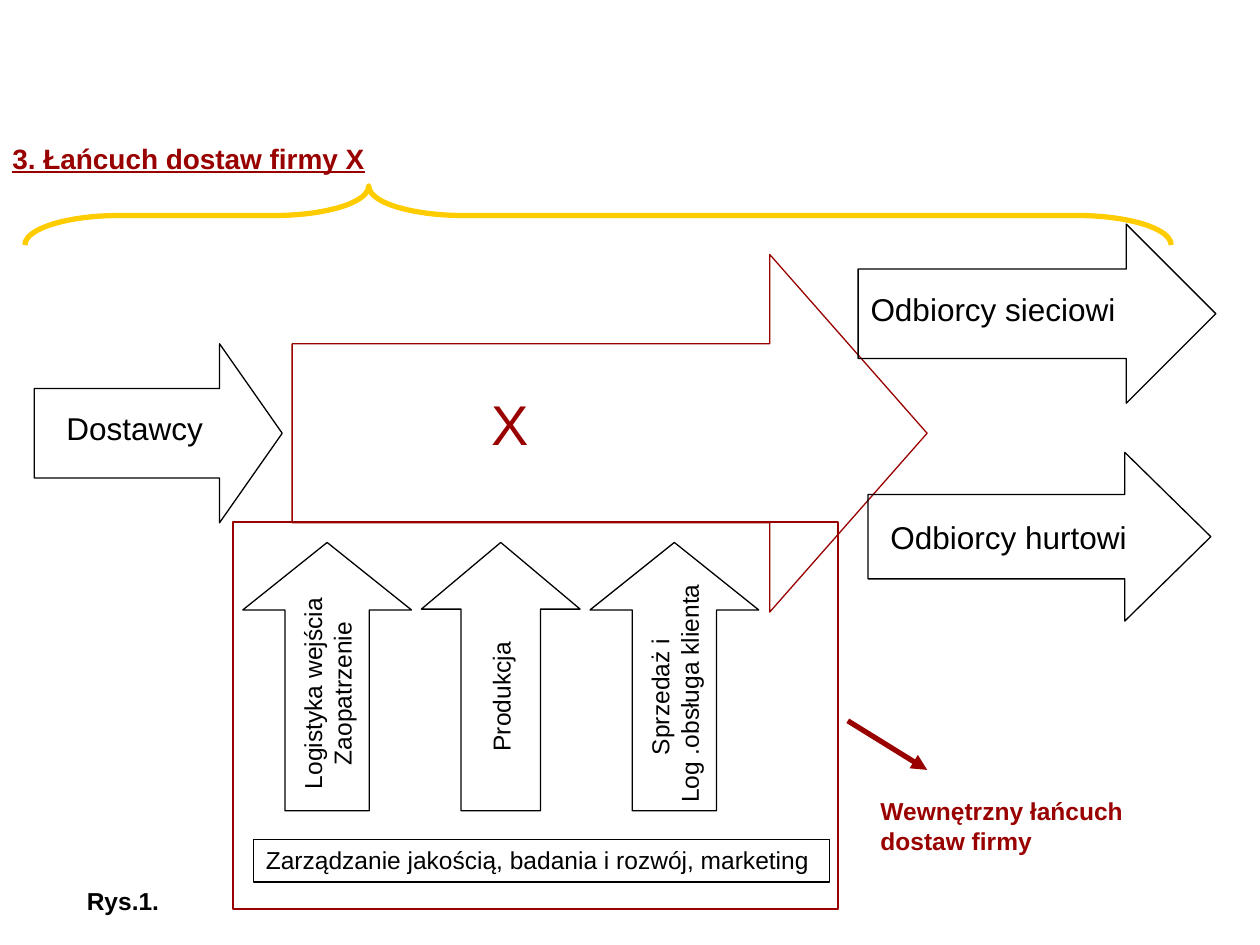
"""Build the slide showing the supply chain of company X."""
from lxml import etree
from pptx import Presentation
from pptx import util as u
from pptx.dml.color import RGBColor
from pptx.enum import shapes, text
from pptx.oxml import ns

COLOURS = {"black": "000000", "red": "990000", "gold": "FFCC00"}


def write(shape, lines, size, colour="black", bold=False, underline=False,
          align=text.PP_ALIGN.LEFT, anchor=text.MSO_ANCHOR.TOP, wrap=True):
    frame = shape.text_frame
    frame.word_wrap = wrap
    frame.vertical_anchor = anchor
    for index, line in enumerate(lines):
        paragraph = frame.add_paragraph() if index else frame.paragraphs[0]
        paragraph.alignment = align
        run = paragraph.add_run()
        run.text = line
        run.font.name = "Arial"
        run.font.size = u.Pt(size)
        run.font.bold = bold
        run.font.underline = underline
        run.font.color.rgb = RGBColor.from_string(COLOURS[colour])


def outline(kind, box, colour="black", width=0.75, adjustments=(), rotation=0):
    shape = slide.shapes.add_shape(kind, *map(u.Cm, box))
    shape.shadow.inherit = False
    shape.fill.background()
    shape.line.color.rgb = RGBColor.from_string(COLOURS[colour])
    shape.line.width = u.Pt(width)
    shape.rotation = rotation
    for index, value in enumerate(adjustments):
        shape.adjustments[index] = value
    return shape


presentation = Presentation()
presentation.slide_width = u.Cm(25.4)
presentation.slide_height = u.Cm(19.05)
slide = presentation.slides.add_slide(presentation.slide_layouts[6])

centred = {"align": text.PP_ALIGN.CENTER}
strong = {"bold": True}
labels = [
    ("Dostawcy", (1.09, 8.13, 3.61, 1.02), 18, "black", {}),
    ("X", (6.98, 7.72, 6.6, 2.77), 32, "red", centred),
    ("Odbiorcy sieciowi", (17.3, 5.72, 6.2, 1.02), 18, "black", {}),
    ("Odbiorcy hurtowi", (17.7, 10.31, 5.79, 1.02), 18, "black", {}),
    ("3. Łańcuch dostaw firmy X", (0, 2.72, 17.2, 0.94), 16, "red",
     {"bold": True, "underline": True}),
    ("Wewnętrzny łańcuch dostaw firmy", (17.5, 15.93, 7.21, 1.45), 14, "red", strong),
    ("Rys.1.", (1.5, 17.73, 3.1, 0.84), 14, "black", strong),
]
for wording, box, size, colour, style in labels:
    write(slide.shapes.add_textbox(*map(u.Cm, box)), [wording], size, colour, **style)

ARROW = shapes.MSO_SHAPE.RIGHT_ARROW
flow_arrows = [
    ((0.69, 6.93, 5, 3.61), "black", 0.35),
    ((5.89, 5.13, 12.8, 7.21), "red", 0.44),
    ((17.3, 4.52, 7.21, 3.61), "black", 0.5),
    ((17.5, 9.12, 6.91, 3.4), "black", 0.51),
]
for box, colour, head in flow_arrows:
    outline(ARROW, box, colour, adjustments=(0.5, head))

process_arrows = [
    (["Logistyka wejścia", "Zaopatrzenie"], 3.4, 0.4),
    (["Produkcja "], 3.2, 0.42),
    (["Sprzedaż i ", "Log .obsługa klienta"], 3.4, 0.4),
]
for index, (lines, thickness, head) in enumerate(process_arrows):
    box = (3.89 + 3.5 * index, 13.64 - thickness / 2, 5.41, thickness)
    arrow = outline(ARROW, box, adjustments=(0.5, head), rotation=270)
    write(arrow, lines, 14, anchor=text.MSO_ANCHOR.MIDDLE, wrap=False, **centred)

support = outline(shapes.MSO_SHAPE.RECTANGLE, (5.11, 16.92, 11.61, 0.86))
write(support, ["Zarządzanie jakością, badania i rozwój, marketing"], 14)
outline(shapes.MSO_SHAPE.RECTANGLE, (4.7, 10.52, 12.19, 7.8), "red", 1)

pointer = slide.shapes.add_connector(
    shapes.MSO_CONNECTOR.STRAIGHT, *map(u.Cm, (17.09, 14.53, 18.69, 15.52)))
pointer.line.color.rgb = RGBColor.from_string(COLOURS["red"])
pointer.line.width = u.Pt(3)
etree.SubElement(pointer.line._get_or_add_ln(), ns.qn("a:tailEnd"), type="triangle")
etree.SubElement(pointer._element.spPr, ns.qn("a:effectLst"))

outline(shapes.MSO_SHAPE.LEFT_BRACE, (11.46, -7.21, 1.19, 23.11), "gold", 3,
        adjustments=(1.6, 0.7), rotation=90)

presentation.save("out.pptx")
